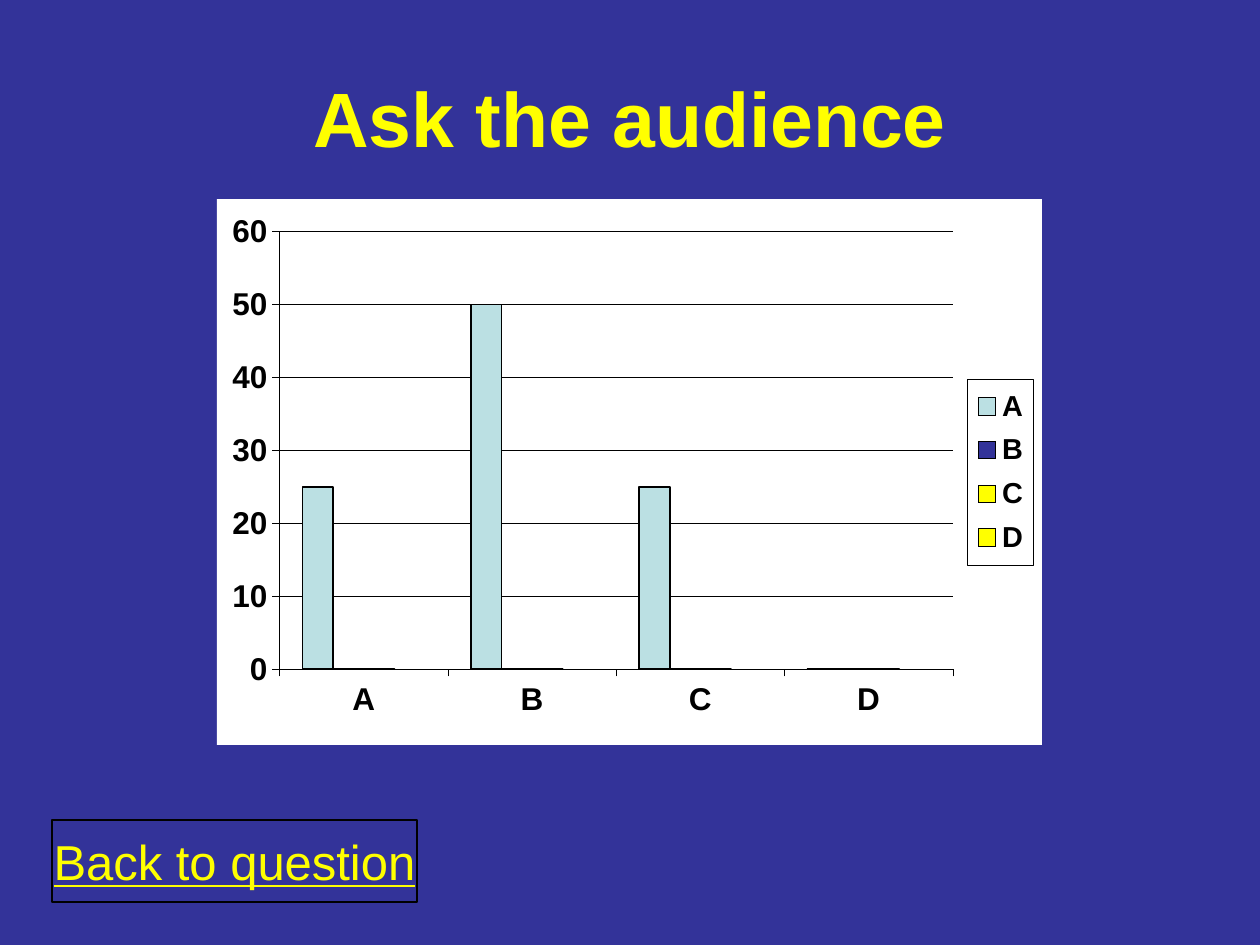
from pptx import Presentation
from pptx.chart.data import CategoryChartData as Data
from pptx.dml.color import RGBColor
from pptx.enum.chart import XL_CHART_TYPE as Kind, XL_LEGEND_POSITION as Side
from pptx.enum.chart import XL_TICK_LABEL_POSITION as Label, XL_TICK_MARK as Tick
from pptx.enum.shapes import MSO_SHAPE as Shape
from pptx.enum.text import MSO_ANCHOR as Anchor, PP_ALIGN as Align
from pptx.oxml import parse_xml
from pptx.oxml.ns import nsdecls, qn
from pptx.util import Emu, Pt

NAVY = RGBColor(0x33, 0x33, 0x99)
YELLOW = RGBColor(0xFF, 0xFF, 0x00)
AQUA = RGBColor(0xBB, 0xE0, 0xE3)
BLACK = RGBColor(0, 0, 0)
DPI = 126
VOTES = {
    "A": ((25, 50, 25, 0), AQUA),
    "B": ((0, 0, 0, 0), NAVY),
    "C": ((0, 0, 0, 0), YELLOW),
    "D": ((None,) * 4, YELLOW),
}


def px(num):
    """Turn pixels into EMU."""
    return Emu(round(num * 914400 / DPI))


def style(font, size, color, **more):
    """Set the format values of a font."""
    for key, val in {"name": "Arial", "size": Pt(size), **more}.items():
        setattr(font, key, val)
    font.color.rgb = color


def stroke(line, width):
    """Draw a black line of the given width in points."""
    line.color.rgb = BLACK
    line.width = Pt(width)


def write(shape, text, size, **more):
    """Put one centred yellow line of text into a shape."""
    frame = shape.text_frame
    frame.vertical_anchor = Anchor.MIDDLE
    para = frame.paragraphs[0]
    para.alignment = Align.CENTER
    run = para.add_run()
    run.text = text
    style(run.font, size, YELLOW, **more)


def layout(box, inner=False):
    """Make a manual chart layout from fractions of the chart."""
    target = '<c:layoutTarget val="inner"/>' if inner else ""
    modes = "".join(f'<c:{key}Mode val="edge"/>' for key in "xy")
    vals = "".join(f'<c:{key} val="{val}"/>' for key, val in zip("xywh", box))
    return parse_xml(f'<c:layout {nsdecls("c")}><c:manualLayout>{target}{modes}{vals}'
                     '</c:manualLayout></c:layout>')


def panel(line):
    """Make a white chart panel with the given line content."""
    return parse_xml(f'<c:spPr {nsdecls("c", "a")}><a:solidFill><a:srgbClr val="FFFFFF"/>'
                     f'</a:solidFill><a:ln w="3175">{line}</a:ln></c:spPr>')


def head(slide, box):
    """Place the title."""
    title = slide.shapes.title
    title.left, title.top, title.width, title.height = map(px, box)
    write(title, "Ask the audience", 44, bold=True)


def key_box(chart):
    """Place the framed legend on the right."""
    chart.has_legend = True
    legend = chart.legend
    legend.position = Side.RIGHT
    legend.include_in_layout = False
    style(legend.font, 16.5, BLACK, bold=True)
    node = legend._element
    for old in node.findall(qn("c:layout")):
        node.remove(old)
    node.find(qn("c:legendPos")).addnext(layout((0.91, 0.33, 0.08, 0.34)))
    node.find(qn("c:overlay")).addnext(
        panel('<a:solidFill><a:srgbClr val="000000"/></a:solidFill>'))


def votes(slide, box):
    """Place the chart of audience votes."""
    data = Data()
    data.categories = list(VOTES)
    for name, (vals, _) in VOTES.items():
        data.add_series(name, vals)
    chart = slide.shapes.add_chart(Kind.COLUMN_CLUSTERED, *map(px, box), data).chart
    chart.has_title = False
    style(chart.font, 18, BLACK, bold=True)
    plot = chart.plots[0]
    for key, val in {"gap_width": 150, "overlap": 0, "vary_by_categories": False}.items():
        setattr(plot, key, val)
    for bar, (_, color) in zip(plot.series, VOTES.values()):
        bar.format.fill.solid()
        bar.format.fill.fore_color.rgb = color
        stroke(bar.format.line, 1)
    for axis in (chart.category_axis, chart.value_axis):
        axis.major_tick_mark = Tick.OUTSIDE
        axis.minor_tick_mark = Tick.NONE
        style(axis.tick_labels.font, 18, BLACK, bold=True)
        stroke(axis.format.line, 0.25)
    chart.category_axis.tick_label_position = Label.LOW
    scale = chart.value_axis
    for key, val in {"minimum_scale": 0, "maximum_scale": 60, "major_unit": 10}.items():
        setattr(scale, key, val)
    stroke(scale.major_gridlines.format.line, 0.25)
    key_box(chart)
    root = chart._chartSpace.find(qn("c:chart"))
    root.addnext(panel("<a:noFill/>"))
    area = root.find(qn("c:plotArea"))
    for old in area.findall(qn("c:layout")):
        area.remove(old)
    area.insert(0, layout((0.076, 0.06, 0.816, 0.801), True))


def back(slide, box):
    """Place the framed button that leads back."""
    shape = slide.shapes.add_shape(Shape.RECTANGLE, *map(px, box))
    shape.shadow.inherit = False
    shape.fill.background()
    stroke(shape.line, 0.75)
    shape.text_frame.word_wrap = False
    write(shape, "Back to question", 28, underline=True)


def main():
    """Build the slide and save it."""
    deck = Presentation()
    deck.slide_width, deck.slide_height = px(1260), px(945)
    slide = deck.slides.add_slide(deck.slide_layouts[5])
    slide.background.fill.solid()
    slide.background.fill.fore_color.rgb = NAVY
    head(slide, (63, 38, 1134, 157))
    votes(slide, (217, 199, 825, 546))
    back(slide, (52, 820, 365, 82))
    deck.save("out.pptx")


if __name__ == "__main__":
    main()
